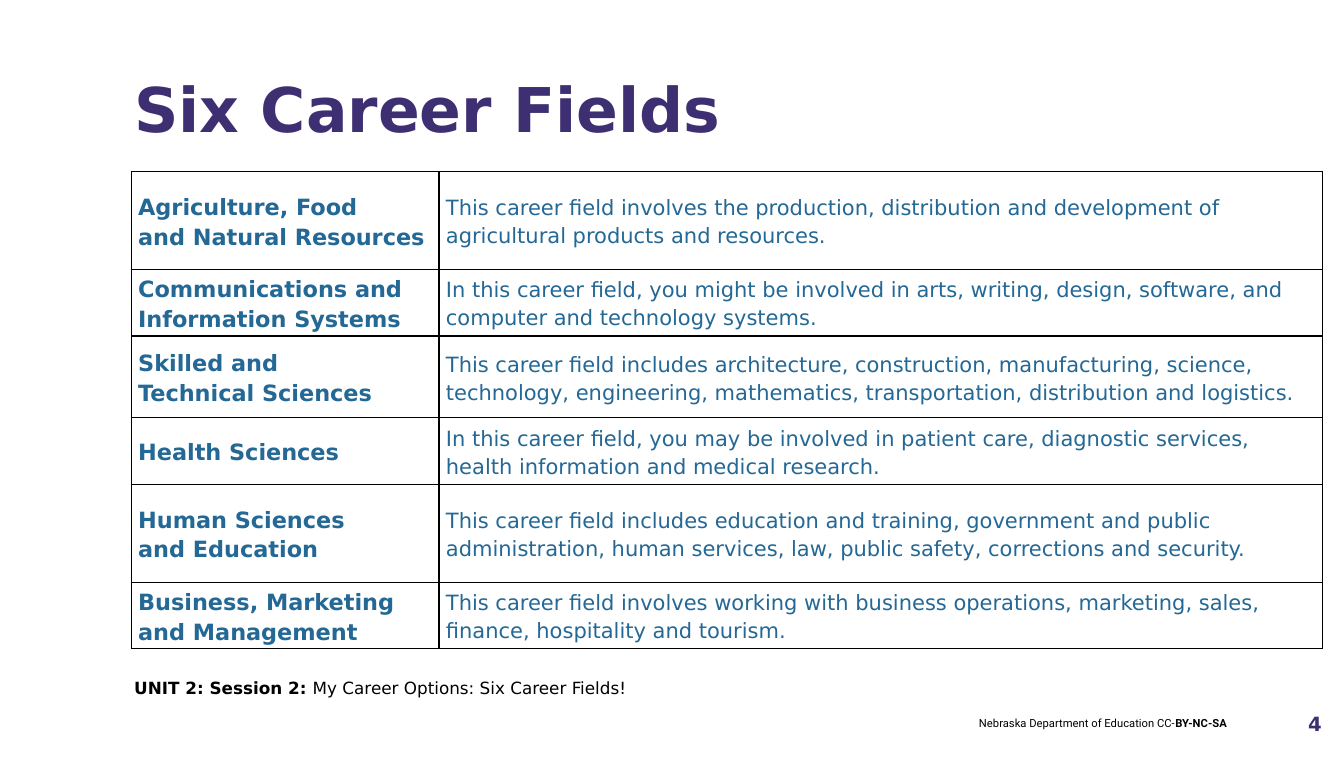
from dataclasses import dataclass

from lxml.etree import SubElement
from pptx import Presentation
from pptx.dml.color import RGBColor
from pptx.enum.text import MSO_ANCHOR, PP_ALIGN
from pptx.oxml.ns import qn
from pptx.util import Inches, Pt


@dataclass(frozen=True)
class Theme:
    sans: str = "DejaVu Sans"
    small: str = "Roboto"
    title: str = "3E2F72"
    page: str = "3E2F71"
    body: str = "246895"
    ink: str = "000000"
    paper: str = "FFFFFF"
    title_pt: int = 44
    field_pt: int = 16
    about_pt: int = 15
    page_pt: int = 14
    unit_pt: int = 12
    credit_pt: int = 8
    line_pt: int = 1


THEME = Theme()

# Career field (one string per paragraph), description, row height
FIELDS = [
    (["Agriculture, Food", "and Natural Resources"],
     "This career field involves the production, distribution and development "
     "of agricultural products and resources.", 0.97),
    (["Communications and Information Systems"],
     "In this career field, you might be involved in arts, writing, design, "
     "software, and computer and technology systems.", 0.66),
    (["Skilled and", "Technical Sciences"],
     "This career field includes architecture, construction, manufacturing, "
     "science, technology, engineering, mathematics, transportation, "
     "distribution and logistics.", 0.81),
    (["Health Sciences"],
     "In this career field, you may be involved in patient care, diagnostic "
     "services, health information and medical research.", 0.66),
    (["Human Sciences", "and Education"],
     "This career field includes education and training, government and public "
     "administration, human services, law, public safety, corrections and "
     "security.", 0.97),
    (["Business, Marketing and Management"],
     "This career field involves working with business operations, marketing, "
     "sales, finance, hospitality and tourism.", 0.66),
]
COLS = (3.05, 8.76)


def add_run(para, text, size, color, bold=False, font=THEME.sans):
    run = para.add_run()
    run.text = text
    run.font.name = font
    run.font.size = Pt(size)
    run.font.bold = bold
    run.font.color.rgb = RGBColor.from_string(color)


def add_label(slide, box, runs, size, color, font=THEME.sans,
              align=PP_ALIGN.LEFT, anchor=MSO_ANCHOR.TOP):
    """Add a one-line text box; runs are (text, bold) pairs."""
    frame = slide.shapes.add_textbox(*map(Inches, box)).text_frame
    frame.word_wrap = True
    frame.vertical_anchor = anchor
    frame.margin_left = frame.margin_right = 0
    frame.margin_top = frame.margin_bottom = 0
    para = frame.paragraphs[0]
    para.alignment = align
    for text, bold in runs:
        add_run(para, text, size, color, bold, font)


def add_edges(cell):
    props = cell._tc.get_or_add_tcPr()
    for side in ("lnL", "lnR", "lnT", "lnB"):
        line = SubElement(props, qn(f"a:{side}"), w=str(Pt(THEME.line_pt)))
        fill = SubElement(line, qn("a:solidFill"))
        SubElement(fill, qn("a:srgbClr"), val=THEME.ink)


def fill_cell(cell, lines, size, bold):
    add_edges(cell)
    cell.fill.background()
    cell.vertical_anchor = MSO_ANCHOR.MIDDLE
    cell.margin_left = cell.margin_right = Inches(0.07)
    cell.margin_top = cell.margin_bottom = 0
    frame = cell.text_frame
    for i, text in enumerate(lines):
        para = frame.add_paragraph() if i else frame.paragraphs[0]
        para.line_spacing = 1.15
        add_run(para, text, size, THEME.body, bold)


def add_grid(slide, left, top):
    high = sum(row[2] for row in FIELDS)
    table = slide.shapes.add_table(
        len(FIELDS), len(COLS), Inches(left), Inches(top),
        Inches(sum(COLS)), Inches(high)).table
    table.first_row = table.horz_banding = False
    for col, width in zip(table.columns, COLS):
        col.width = Inches(width)
    for row, (names, about, height) in zip(table.rows, FIELDS):
        row.height = Inches(height)
        fill_cell(row.cells[0], names, THEME.field_pt, True)
        fill_cell(row.cells[1], [about], THEME.about_pt, False)


def main():
    deck = Presentation()
    deck.slide_width, deck.slide_height = Inches(13.32), Inches(7.5)
    slide = deck.slides.add_slide(deck.slide_layouts[6])
    back = slide.background.fill
    back.solid()
    back.fore_color.rgb = RGBColor.from_string(THEME.paper)

    # Title and table
    add_label(slide, (1.33, 0.7, 11.32, 1.03), [("Six Career Fields", True)],
              THEME.title_pt, THEME.title)
    add_grid(slide, 1.3, 1.7)

    # Footer: unit, credit and page number
    add_label(slide, (1.33, 6.71, 5.17, 0.43),
              [("UNIT 2: Session 2: ", True),
               ("My Career Options: Six Career Fields!", False)],
              THEME.unit_pt, THEME.ink)
    add_label(slide, (8.4, 7.1, 3.76, 0.25),
              [("Nebraska Department of Education CC-", False),
               ("BY-NC-SA", True)],
              THEME.credit_pt, THEME.ink, THEME.small, PP_ALIGN.RIGHT)
    add_label(slide, (12.65, 6.98, 0.45, 0.37), [("4", True)],
              THEME.page_pt, THEME.page, align=PP_ALIGN.RIGHT,
              anchor=MSO_ANCHOR.MIDDLE)

    deck.save("out.pptx")


if __name__ == "__main__":
    main()
